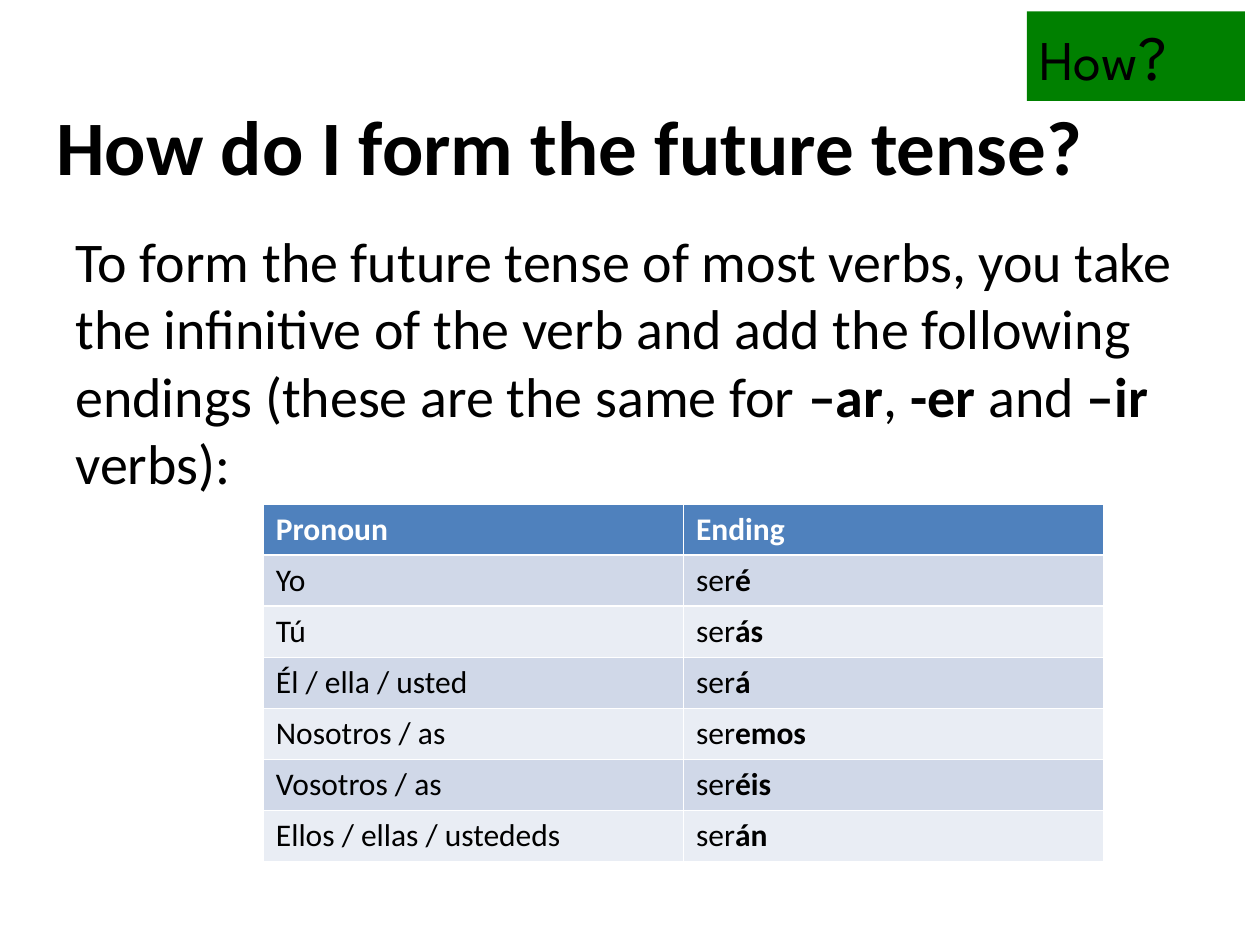
from pptx import Presentation
from pptx.dml.color import RGBColor
from pptx.enum.shapes import MSO_SHAPE
from pptx.enum.text import MSO_ANCHOR, PP_ALIGN
from pptx.util import Emu, Pt

PX = 9144
BLACK = RGBColor(0x00, 0x00, 0x00)
WHITE = RGBColor(0xFF, 0xFF, 0xFF)
GREEN = RGBColor(0x00, 0x80, 0x00)
HEADER_BLUE = RGBColor(0x4F, 0x81, 0xBD)
BANDS = RGBColor(0xE9, 0xED, 0xF4), RGBColor(0xD0, 0xD8, 0xE8)

ENDINGS = [
    ("Yo", "é"),
    ("Tú", "ás"),
    ("Él / ella / usted", "á"),
    ("Nosotros / as", "emos"),
    ("Vosotros / as", "éis"),
    ("Ellos / ellas / ustededs", "án"),
]


def px(*lengths):
    return [Emu(length * PX) for length in lengths]


def add_span(para, text, size=18, bold=False, color=BLACK, font="Calibri"):
    span = para.add_run()
    span.text = text
    span.font.size = Pt(size)
    span.font.bold = bold
    span.font.color.rgb = color
    span.font.name = font


class LessonPage:
    """Holds the text style and the current slide, and adds elements to it."""

    def __init__(self, deck, font="Calibri"):
        self.page = deck.slides.add_slide(deck.slide_layouts[6])
        self.font = font

    def text(self, spans, place, size, anchor=MSO_ANCHOR.TOP):
        frame = self.page.shapes.add_textbox(*px(*place)).text_frame
        frame.word_wrap = True
        frame.vertical_anchor = anchor
        for text, bold in spans:
            add_span(frame.paragraphs[0], text, size=size, bold=bold, font=self.font)

    def label(self, spans, place, fill, font):
        box = self.page.shapes.add_shape(MSO_SHAPE.RECTANGLE, *px(*place))
        box.shadow.inherit = False
        box.fill.solid()
        box.fill.fore_color.rgb = fill
        box.line.fill.background()
        box.text_frame.word_wrap = True
        box.text_frame.vertical_anchor = MSO_ANCHOR.TOP
        para = box.text_frame.paragraphs[0]
        para.alignment = PP_ALIGN.LEFT
        for text, size in spans:
            add_span(para, text, size=size, font=font)

    def cell(self, cell, spans, fill, color=BLACK):
        cell.fill.solid()
        cell.fill.fore_color.rgb = fill
        for text, bold in spans:
            add_span(cell.text_frame.paragraphs[0], text, bold=bold, color=color, font=self.font)

    def endings_table(self, headings, stem, endings, place):
        rows = len(endings) + 1
        table = self.page.shapes.add_table(rows, len(headings), *px(*place)).table
        for column, heading in enumerate(headings):
            self.cell(table.cell(0, column), [(heading, True)], HEADER_BLUE, WHITE)
        for row, (pronoun, ending) in enumerate(endings, 1):
            fill = BANDS[row % 2]
            self.cell(table.cell(row, 0), [(pronoun, False)], fill)
            self.cell(table.cell(row, 1), [(stem, False), (ending, True)], fill)


def main():
    deck = Presentation()
    deck.slide_width, deck.slide_height = px(1000, 750)
    lesson = LessonPage(deck)
    lesson.text([("How do I form the future tense?", True)], (35, 52, 900, 125), 44, MSO_ANCHOR.MIDDLE)
    lesson.text(
        [
            ("To form the future tense of most verbs, you take the infinitive of the verb "
             "and add the following endings (these are the same for ", False),
            ("–ar", True),
            (", ", False),
            ("-er ", True),
            ("and ", False),
            ("–ir", True),
            (" verbs):", False),
        ],
        (50, 175, 900, 495),
        32,
    )
    lesson.endings_table(("Pronoun", "Ending"), "ser", ENDINGS, (209, 400, 667, 284))
    lesson.label([("How", 32), ("?", 36)], (815, 9, 173, 71), GREEN, "League Spartan")
    deck.save("out.pptx")


if __name__ == "__main__":
    main()
